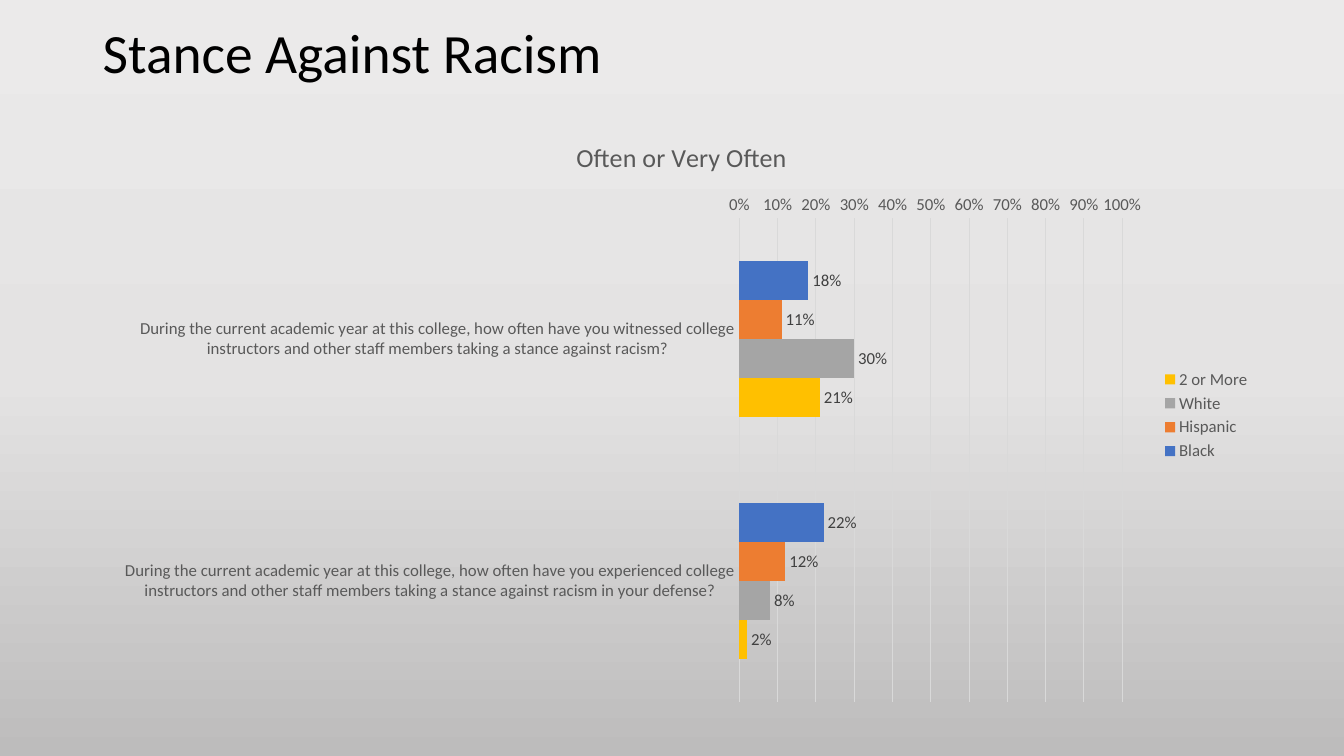
import copy

import pptx
import pptx.chart.data
import pptx.dml.color
import pptx.enum.chart
import pptx.enum.text
import pptx.oxml
import pptx.oxml.ns
import pptx.util
from pptx.util import Inches

RGBColor = pptx.dml.color.RGBColor
BLACK = RGBColor(0x00, 0x00, 0x00)
LABEL_GRAY = RGBColor(0x40, 0x40, 0x40)
TEXT_GRAY = RGBColor(0x59, 0x59, 0x59)
LINE_GRAY = RGBColor(0xD9, 0xD9, 0xD9)
BACKGROUND_STOPS = [
    (0, RGBColor(0xEB, 0xEA, 0xEA)),
    (0.5, RGBColor(0xE4, 0xE3, 0xE3)),
    (1, RGBColor(0xBD, 0xBC, 0xBC)),
]
FONT = "Calibri"

QUESTIONS = [
    "During the current academic year at this college, how often have you witnessed "
    "college instructors and other staff members taking a stance against racism?",
    "During the current academic year at this college, how often have you experienced "
    "college instructors and other staff members taking a stance against racism in your defense?",
]
GROUPS = [
    ("Black", (0.18, 0.22), RGBColor(0x44, 0x72, 0xC4)),
    ("Hispanic", (0.11, 0.12), RGBColor(0xED, 0x7D, 0x31)),
    ("White", (0.30, 0.08), RGBColor(0xA5, 0xA5, 0xA5)),
    ("2 or More", (0.21, 0.02), RGBColor(0xFF, 0xC0, 0x00)),
]


def style_font(font, size, color):
    font.name = FONT
    font.size = pptx.util.Pt(size)
    font.bold = False
    font.color.rgb = color


def style_line(line, color):
    line.color.rgb = color
    line.width = pptx.util.Pt(0.75)


def paint_background(slide):
    fill = slide.background.fill
    fill.gradient()
    fill.gradient_angle = 270
    stop_list = slide.element.find(".//" + pptx.oxml.ns.qn("a:gsLst"))
    stop_list.append(copy.deepcopy(stop_list[0]))
    for stop, (position, color) in zip(fill.gradient_stops, BACKGROUND_STOPS):
        stop.position = position
        stop.color.rgb = color


def add_title(slide, left, top, width, height):
    frame = slide.shapes.add_textbox(left, top, width, height).text_frame
    frame.word_wrap = True
    frame.vertical_anchor = pptx.enum.text.MSO_ANCHOR.MIDDLE
    paragraph = frame.paragraphs[0]
    paragraph.text = "Stance Against Racism"
    paragraph.line_spacing = 0.9
    style_font(paragraph.font, 39.6, BLACK)


def fix_plot_area(chart, x, y, width, height):
    """Place the inner plot area, in fractions of the chart."""
    namespace = pptx.oxml.ns.nsdecls("c")
    layout = pptx.oxml.parse_xml(
        f'<c:layout {namespace}><c:manualLayout><c:layoutTarget val="inner"/>'
        f'<c:xMode val="edge"/><c:yMode val="edge"/><c:x val="{x}"/><c:y val="{y}"/>'
        f'<c:w val="{width}"/><c:h val="{height}"/></c:manualLayout></c:layout>'
    )
    plot_area = chart.element.find(".//" + pptx.oxml.ns.qn("c:plotArea"))
    for old_layout in plot_area.findall(pptx.oxml.ns.qn("c:layout")):
        plot_area.remove(old_layout)
    plot_area.insert(0, layout)


def style_axes(chart):
    for axis in (chart.category_axis, chart.value_axis):
        axis.major_tick_mark = pptx.enum.chart.XL_TICK_MARK.NONE
        axis.minor_tick_mark = pptx.enum.chart.XL_TICK_MARK.NONE
        style_font(axis.tick_labels.font, 12, TEXT_GRAY)
    chart.category_axis.reverse_order = True
    style_line(chart.category_axis.format.line, LINE_GRAY)

    value_axis = chart.value_axis
    value_axis.minimum_scale = 0
    value_axis.maximum_scale = 1
    value_axis.major_unit = 0.1
    value_axis.tick_labels.number_format = "0%"
    value_axis.tick_labels.number_format_is_linked = False
    value_axis.format.line.fill.background()
    style_line(value_axis.major_gridlines.format.line, LINE_GRAY)


def style_bars(plot):
    plot.gap_width = 219
    plot.overlap = 0
    plot.vary_by_categories = False
    for series, (_, _, color) in zip(plot.series, GROUPS):
        series.format.fill.solid()
        series.format.fill.fore_color.rgb = color
        labels = series.data_labels
        labels.show_value = True
        labels.number_format = "0%"
        labels.number_format_is_linked = False
        labels.position = pptx.enum.chart.XL_LABEL_POSITION.OUTSIDE_END
        style_font(labels.font, 12, LABEL_GRAY)


def add_survey_chart(slide, left, top, width, height):
    data = pptx.chart.data.CategoryChartData(number_format="0%")
    data.categories = QUESTIONS
    for name, values, _ in GROUPS:
        data.add_series(name, values)
    chart = slide.shapes.add_chart(
        pptx.enum.chart.XL_CHART_TYPE.BAR_CLUSTERED, left, top, width, height, data
    ).chart
    style_font(chart.font, 10, BLACK)

    chart.has_title = True
    title = chart.chart_title.text_frame.paragraphs[0]
    title.text = "Often or Very Often"
    style_font(title.font, 18.6, TEXT_GRAY)

    chart.has_legend = True
    chart.legend.position = pptx.enum.chart.XL_LEGEND_POSITION.RIGHT
    chart.legend.include_in_layout = False
    style_font(chart.legend.font, 12, TEXT_GRAY)

    style_axes(chart)
    style_bars(chart.plots[0])
    fix_plot_area(chart, 0.55, 0.17, 0.33, 0.81)


def main():
    presentation = pptx.Presentation()
    presentation.slide_width = Inches(13.33)
    presentation.slide_height = Inches(7.5)
    slide = presentation.slides.add_slide(presentation.slide_layouts[6])
    paint_background(slide)
    add_title(slide, Inches(0.92), Inches(0.22), Inches(11.5), Inches(0.67))
    add_survey_chart(slide, Inches(1.01), Inches(1.16), Inches(11.5), Inches(5.92))
    presentation.save("out.pptx")


if __name__ == "__main__":
    main()
